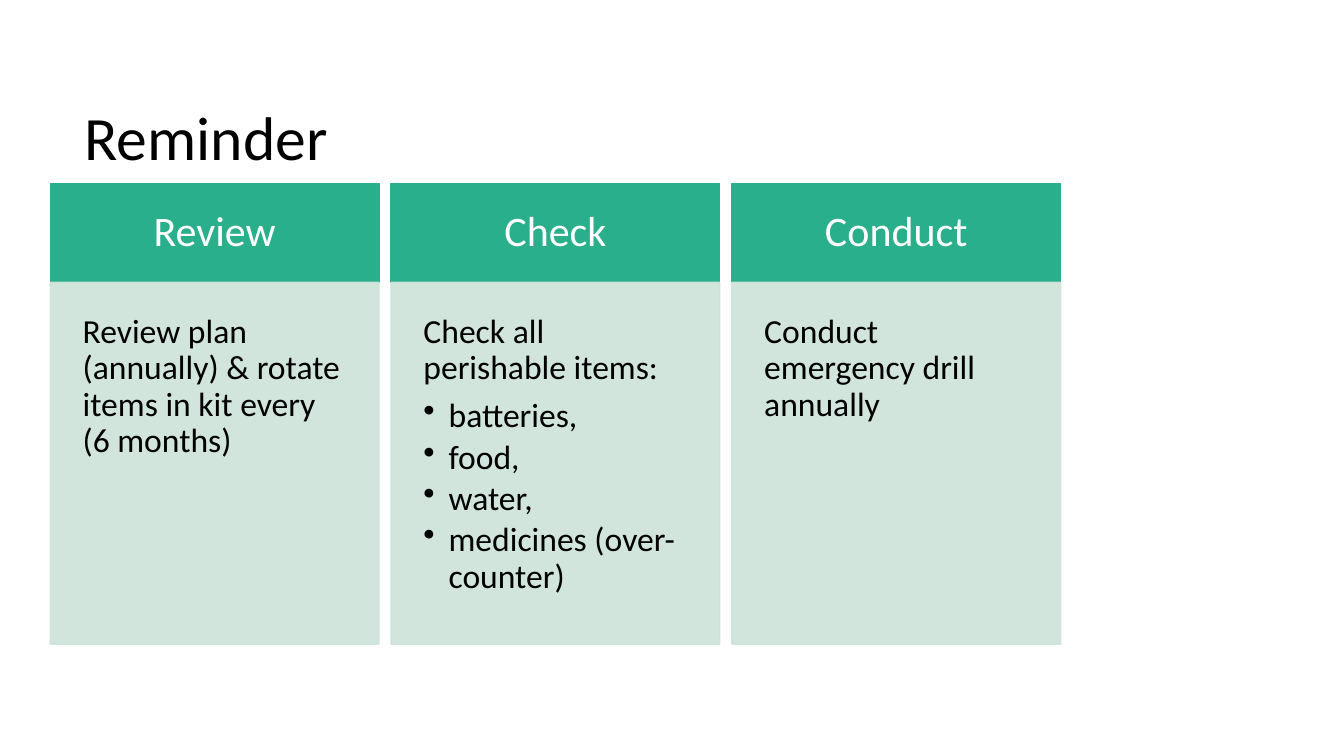
from lxml import etree
from pptx import Presentation
from pptx.dml.color import RGBColor
from pptx.enum import shapes, text
from pptx.oxml import ns
from pptx.util import Inches, Pt

# Content
TITLE = "Reminder"
COLUMNS = [
    ("Review", "Review plan (annually) & rotate items in kit every (6 months)", []),
    ("Check", "Check all perishable items:",
     ["batteries,", "food,", "water,", "medicines (over-counter)"]),
    ("Conduct", "Conduct emergency drill annually", []),
]

THEME = {
    "font": "Calibri", "ink": "000000", "paper": "FFFFFF",
    "header": "29AF8C", "body": "CDE3DA", "body_alpha": 90,
    "title_size": 44, "header_size": 30, "body_size": 24,
}

# Layout in inches
LEFT, TOP = 0.5, 1.82
WIDTH, PITCH = 3.26, 3.38
HEADER_HEIGHT, BODY_HEIGHT = 0.98, 3.59
BULLET_INDENT = 0.25


def add_bullet(para):
    props = para._p.get_or_add_pPr()
    props.set("marL", str(Inches(BULLET_INDENT)))
    props.set("indent", str(-Inches(BULLET_INDENT)))
    etree.SubElement(props, ns.qn("a:buChar")).set("char", "•")


def write(box, lines, size, color, inset=None, align=text.PP_ALIGN.LEFT,
          anchor=text.MSO_ANCHOR.TOP):
    """Write (wording, is_bullet, space after as a share of size) lines."""
    frame = box.text_frame
    frame.word_wrap = True
    frame.vertical_anchor = anchor
    if inset is not None:
        frame.margin_left = frame.margin_right = Inches(inset)
        frame.margin_top = frame.margin_bottom = Inches(inset)
    for index, (wording, is_bullet, after) in enumerate(lines):
        para = frame.add_paragraph() if index else frame.paragraphs[0]
        para.alignment = align
        para.line_spacing = 0.9
        para.space_after = Pt(size * after)
        if is_bullet:
            add_bullet(para)
        span = para.add_run()
        span.text = wording
        span.font.name = THEME["font"]
        span.font.size = Pt(size)
        span.font.color.rgb = RGBColor.from_string(color)


def add_panel(page, left, top, height, color, alpha=100):
    panel = page.shapes.add_shape(
        shapes.MSO_SHAPE.RECTANGLE,
        Inches(left), Inches(top), Inches(WIDTH), Inches(height))
    panel.shadow.inherit = False
    panel.fill.solid()
    panel.line.width = Pt(1)
    for paint in (panel.fill, panel.line.fill):
        paint.solid()
        paint.fore_color.rgb = RGBColor.from_string(color)
    if alpha < 100:
        for tone in panel._element.spPr.iter(ns.qn("a:srgbClr")):
            etree.SubElement(tone, ns.qn("a:alpha")).set("val", str(alpha * 1000))
    return panel


def main():
    deck = Presentation()
    deck.slide_width, deck.slide_height = Inches(13.33), Inches(7.5)
    page = deck.slides.add_slide(deck.slide_layouts[6])

    # Title
    title = page.shapes.add_textbox(
        Inches(0.74), Inches(0.67), Inches(9.4), Inches(1.44))
    write(title, [(TITLE, False, 0)], THEME["title_size"], THEME["ink"],
          anchor=text.MSO_ANCHOR.MIDDLE)

    # Columns: header above body
    for index, (heading, lead, items) in enumerate(COLUMNS):
        left = LEFT + index * PITCH
        header = add_panel(page, left, TOP, HEADER_HEIGHT, THEME["header"])
        write(header, [(heading, False, 0.35)], THEME["header_size"],
              THEME["paper"], inset=0.26, align=text.PP_ALIGN.CENTER,
              anchor=text.MSO_ANCHOR.MIDDLE)
        body = add_panel(page, left, TOP + HEADER_HEIGHT, BODY_HEIGHT,
                         THEME["body"], THEME["body_alpha"])
        lines = [(lead, False, 0.35)] + [(item, True, 0.15) for item in items]
        write(body, lines, THEME["body_size"], THEME["ink"], inset=0.32)

    deck.save("out.pptx")


if __name__ == "__main__":
    main()
